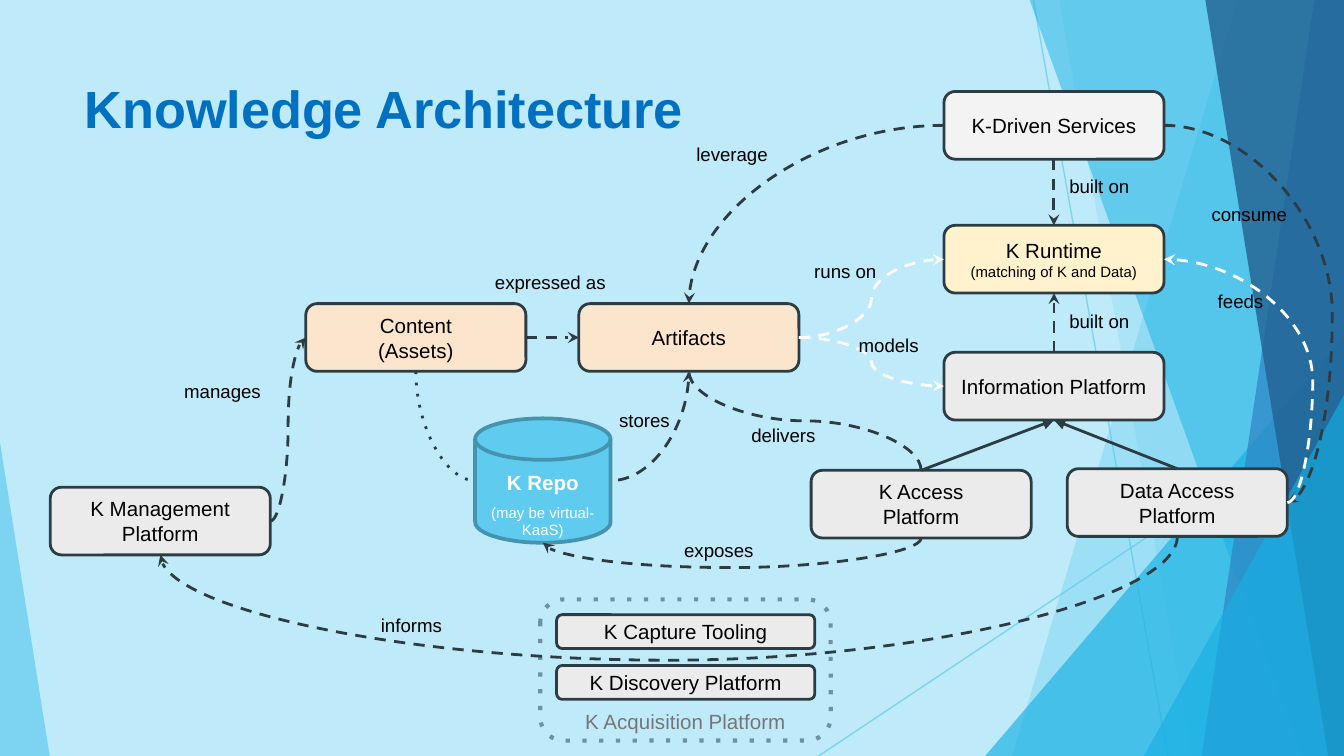
from dataclasses import dataclass
from typing import Optional

from lxml.etree import SubElement
from pptx import Presentation
from pptx.dml.color import RGBColor
from pptx.enum.shapes import MSO_CONNECTOR, MSO_SHAPE
from pptx.enum.text import MSO_ANCHOR, MSO_AUTO_SIZE, PP_ALIGN
from pptx.oxml.ns import qn
from pptx.util import Cm, Pt

HUES = {
    "sky": "BFEAF9", "cyan": "5FCBEF", "azure": "16B0E3", "blue": "2E83C3",
    "navy": "226292", "ink": "2C3C43", "rim": "4594AF", "slate": "6E91A0",
    "peach": "FCE5CD", "grey": "EBEBEB", "pale": "F3F3F3", "cream": "FFF2CC",
    "white": "FFFFFF", "black": "000000", "mute": "767676", "title": "0070C0",
}
WIDE, HIGH = 25.4, 14.29
TOP, LEFT, BASE, RIGHT = range(4)


@dataclass
class Band:
    top: float
    base: float
    hue: str
    alpha: int


@dataclass
class Peak:
    x: float
    y: float
    adj: float
    wide: float
    hue: str


@dataclass
class Box:
    text: str
    x: float
    y: float
    hue: str = "grey"
    w: float = 4.16
    h: float = 1.28
    note: str = ""


@dataclass
class Link:
    start: str
    out: int
    end: str
    into: int
    reach: Optional[float] = None  # how far the curve swings from its start
    hue: str = "ink"
    dash: str = "dash"
    tip: str = "tailEnd"


@dataclass
class Label:
    text: str
    x: float
    y: float
    w: float = 1.83


BACK = [
    Band(23.39, 19.13, "cyan", 35), Band(20.02, 22.53, "cyan", 20),
    Peak(18.62, 6.35, 1, 6.78, "azure"), Band(19.46, 24.59, "azure", 49),
    Band(24.84, 22.71, "blue", 69), Band(22.78, 25.1, "navy", 80),
    Peak(21.62, 7.47, 1, 3.78, "azure"), Peak(0, 8.36, 0, 0.94, "cyan"),
]
RAYS = [(19.53, 0, 22.07, HIGH), (WIDE, 7.67, 15.47, HIGH)]
BOXES = {
    "content": Box("Content\n(Assets)", 5.78, 5.74, "peach"),
    "manage": Box("K Management\nPlatform", 0.95, 9.21),
    "art": Box("Artifacts", 10.94, 5.74, "peach"),
    "run": Box("K Runtime", 17.84, 4.26, "cream", note="(matching of K and Data)"),
    "data": Box("Data Access\nPlatform", 20.17, 8.86),
    "serve": Box("K-Driven Services", 17.84, 1.73, "pale"),
    "access": Box("K Access\nPlatform", 15.33, 8.89),
    "info": Box("Information Platform", 17.84, 6.66),
    "find": Box("K Discovery Platform", 10.52, 12.58, w=4.88, h=0.64),
    "catch": Box("K Capture Tooling", 10.52, 11.62, w=4.88, h=0.64),
    "repo": Box("K Repo", 8.98, 7.91, "cyan", 2.56, 2.35, "(may be virtual- KaaS)"),
    "frame": Box("K Acquisition Platform", 10.21, 11.33, "", 5.49, 2.67),
}
CURVES = [
    Link("manage", RIGHT, "content", LEFT),
    Link("content", RIGHT, "art", LEFT),
    Link("art", BASE, "repo", RIGHT, tip="headEnd"),
    Link("content", BASE, "repo", LEFT, dash="dot", tip=""),
    Link("art", RIGHT, "run", LEFT, hue="white"),
    Link("serve", BASE, "run", TOP),
    Link("serve", RIGHT, "data", RIGHT, 3.18),
    Link("serve", LEFT, "art", TOP),
    Link("data", BASE, "manage", BASE, 2.34),
    Link("access", BASE, "repo", BASE, 0.56),
    Link("info", TOP, "run", BASE),
    Link("access", TOP, "art", BASE, tip=""),
    Link("data", RIGHT, "run", RIGHT, 0.48, "white"),
    Link("art", RIGHT, "info", LEFT, hue="white"),
]
LABELS = [
    Label("manages", 3.2, 6.96, 2.01), Label("stores", 11.38, 7.52, 1.6),
    Label("expressed as", 8.81, 4.9, 3.18), Label("runs on", 15.06, 4.7),
    Label("feeds", 22.53, 5.26), Label("built on", 19.86, 3.1),
    Label("leverage", 12.83, 2.49, 2.01), Label("informs", 6.86, 11.4),
    Label("exposes", 12.67, 9.98), Label("built on", 19.86, 5.64),
    Label("delivers", 13.89, 7.8), Label("consume", 22.53, 3.63, 2.16),
    Label("models", 15.88, 6.1),
]


def rgb(hue: str) -> RGBColor:
    return RGBColor.from_string(HUES[hue])


def fade(item, alpha: int) -> None:
    for clr in item._element.spPr.iter(qn("a:srgbClr")):
        SubElement(clr, qn("a:alpha"), val=str(alpha * 1000))


def fill(shape, hue: str) -> None:
    shape.shadow.inherit = False
    if hue:
        shape.fill.solid()
        shape.fill.fore_color.rgb = rgb(hue)
    else:
        shape.fill.background()


def stroke(item, hue: str, size: float, dash="solid", tip="", head="stealth") -> None:
    item.line.color.rgb = rgb(hue)
    item.line.width = Pt(size)
    ln = item._element.spPr.find(qn("a:ln"))
    SubElement(ln, qn("a:prstDash"), val=dash)
    if tip:
        SubElement(ln, qn("a:" + tip), type=head)


def write(para, text: str, size: float, hue="black", bold=False) -> None:
    para.text = text
    para.alignment = PP_ALIGN.CENTER
    font = para.font
    font.name, font.size, font.bold = "Arial", Pt(size), bold
    font.color.rgb = rgb(hue)


def inset(frame, side: float, top: float, base: float) -> None:
    frame.word_wrap = True
    frame.margin_left = frame.margin_right = Cm(side)
    frame.margin_top, frame.margin_bottom = Cm(top), Cm(base)


def draw_back(slide) -> None:
    for x1, y1, x2, y2 in RAYS:
        ray = join(slide, x1, y1, x2, y2)
        stroke(ray, "cyan", 0.75)
        fade(ray, 69)
    for part in BACK:
        if isinstance(part, Band):
            pen = slide.shapes.build_freeform(Cm(part.top), 0)
            pen.add_line_segments([(Cm(x), Cm(y)) for x, y in
                                   ((WIDE, 0), (WIDE, HIGH), (part.base, HIGH))])
            shape, alpha = pen.convert_to_shape(), part.alpha
        else:
            shape = slide.shapes.add_shape(MSO_SHAPE.ISOSCELES_TRIANGLE, Cm(part.x), Cm(part.y),
                                           Cm(part.wide), Cm(HIGH - part.y))
            shape.adjustments[0] = part.adj
            alpha = 69 if part.hue == "cyan" else 65
        fill(shape, part.hue)
        shape.line.fill.background()
        fade(shape, alpha)


def draw_box(slide, key: str, box: Box):
    disk, ring = key == "repo", key == "frame"
    kind = MSO_SHAPE.FLOWCHART_MAGNETIC_DISK if disk else MSO_SHAPE.ROUNDED_RECTANGLE
    shape = slide.shapes.add_shape(kind, Cm(box.x), Cm(box.y), Cm(box.w), Cm(box.h))
    fill(shape, box.hue)
    frame = shape.text_frame
    inset(frame, 0.25, 0.25, 0.25)
    frame.vertical_anchor = MSO_ANCHOR.MIDDLE
    hue = "black"
    if disk:
        stroke(shape, "rim", 2)
        inset(frame, 0.25, 0.19, 0)
        frame.vertical_anchor, hue = MSO_ANCHOR.TOP, "white"
    elif ring:
        stroke(shape, "slate", 2.25, "dot")
        inset(frame, 0.25, 0, 0)
        frame.vertical_anchor, hue = MSO_ANCHOR.BOTTOM, "mute"
    else:
        stroke(shape, "ink", 1.5)
    write(frame.paragraphs[0], box.text, 11, hue, disk)
    if box.note:
        note = frame.add_paragraph()
        write(note, box.note, 8, hue)
        note.space_before = Pt(4.6 if disk else 0)
    return shape


def join(slide, x1: float, y1: float, x2: float, y2: float, kind=MSO_CONNECTOR.STRAIGHT):
    line = slide.shapes.add_connector(kind, Cm(x1), Cm(y1), Cm(x2), Cm(y2))
    SubElement(line._element.spPr, qn("a:effectLst"))
    return line


def port(key: str, side: int) -> tuple[float, float]:
    box = BOXES[key]
    fx, fy = ((0.5, 0), (0, 0.5), (0.5, 1), (1, 0.5))[side]
    return box.x + fx * box.w, box.y + fy * box.h


def draw_curve(slide, link: Link, shapes: dict) -> None:
    (x1, y1), (x2, y2) = port(link.start, link.out), port(link.end, link.into)
    dx, dy = x2 - x1, y2 - y1
    tall = link.out in (TOP, BASE)
    run, rise = (dy, dx) if tall else (dx, dy)
    line = join(slide, x1, y1, x2, y2, MSO_CONNECTOR.CURVE)
    stroke(line, link.hue, 1.5, link.dash, link.tip)

    # Glue both ends; the disk counts its sites from one
    ends = line._element.nvCxnSpPr.cNvCxnSpPr
    for tag, key, side in (("stCxn", link.start, link.out), ("endCxn", link.end, link.into)):
        site = side + (key == "repo")
        SubElement(ends, qn("a:" + tag), id=str(shapes[key].shape_id), idx=str(site))

    # Turn the curve so that it leaves along its first side
    turn = rise >= 0 if tall else rise < 0
    xfrm = line._element.spPr.xfrm
    xfrm.flipH, xfrm.flipV = (run < 0) != turn, False
    line.rotation = 90 * tall + 180 * turn
    line.width, line.height = Cm(abs(run)), Cm(abs(rise))
    line.left = Cm((x1 + x2 - abs(run)) / 2)
    line.top = Cm((y1 + y2 - abs(rise)) / 2)
    geom = line._element.spPr.find(qn("a:prstGeom"))
    if (link.out - link.into) % 2:
        geom.set("prst", "curvedConnector2")
    elif link.reach:
        guides = geom.find(qn("a:avLst"))
        SubElement(guides, qn("a:gd"), name="adj1", fmla=f"val {round(link.reach / run * 100000)}")


def draw_label(slide, label: Label) -> None:
    box = slide.shapes.add_textbox(Cm(label.x), Cm(label.y), Cm(label.w), Cm(0.94))
    inset(box.text_frame, 0, 0.25, 0.25)
    write(box.text_frame.paragraphs[0], label.text, 10)


def main() -> None:
    deck = Presentation()
    deck.slide_width, deck.slide_height = Cm(WIDE), Cm(HIGH)
    slide = deck.slides.add_slide(deck.slide_layouts[5])
    slide.background.fill.solid()
    slide.background.fill.fore_color.rgb = rgb("sky")
    draw_back(slide)

    # Blocks and the links between them
    shapes = {key: draw_box(slide, key, box) for key, box in BOXES.items()}
    for link in CURVES:
        draw_curve(slide, link, shapes)
    for key in ("access", "data"):
        line = join(slide, *port(key, TOP), *port("info", BASE))
        line.begin_connect(shapes[key], TOP)
        line.end_connect(shapes["info"], BASE)
        stroke(line, "ink", 1.5, tip="tailEnd", head="triangle")
        line._element.spPr.append(line._element.spPr.find(qn("a:effectLst")))
    for label in LABELS:
        draw_label(slide, label)

    # Title, in front of the backdrop
    title = slide.shapes.title
    title.left, title.top, title.width, title.height = Cm(1.42), Cm(1.27), Cm(17.91), Cm(2.74)
    frame = title.text_frame
    frame.auto_size = MSO_AUTO_SIZE.NONE
    frame.vertical_anchor = MSO_ANCHOR.TOP
    inset(frame, 0.18, 0.18, 0.18)
    write(frame.paragraphs[0], "Knowledge Architecture", 28, "title", True)
    frame.paragraphs[0].alignment = PP_ALIGN.LEFT
    slide.shapes._spTree.append(title._element)
    deck.save("out.pptx")


if __name__ == "__main__":
    main()
